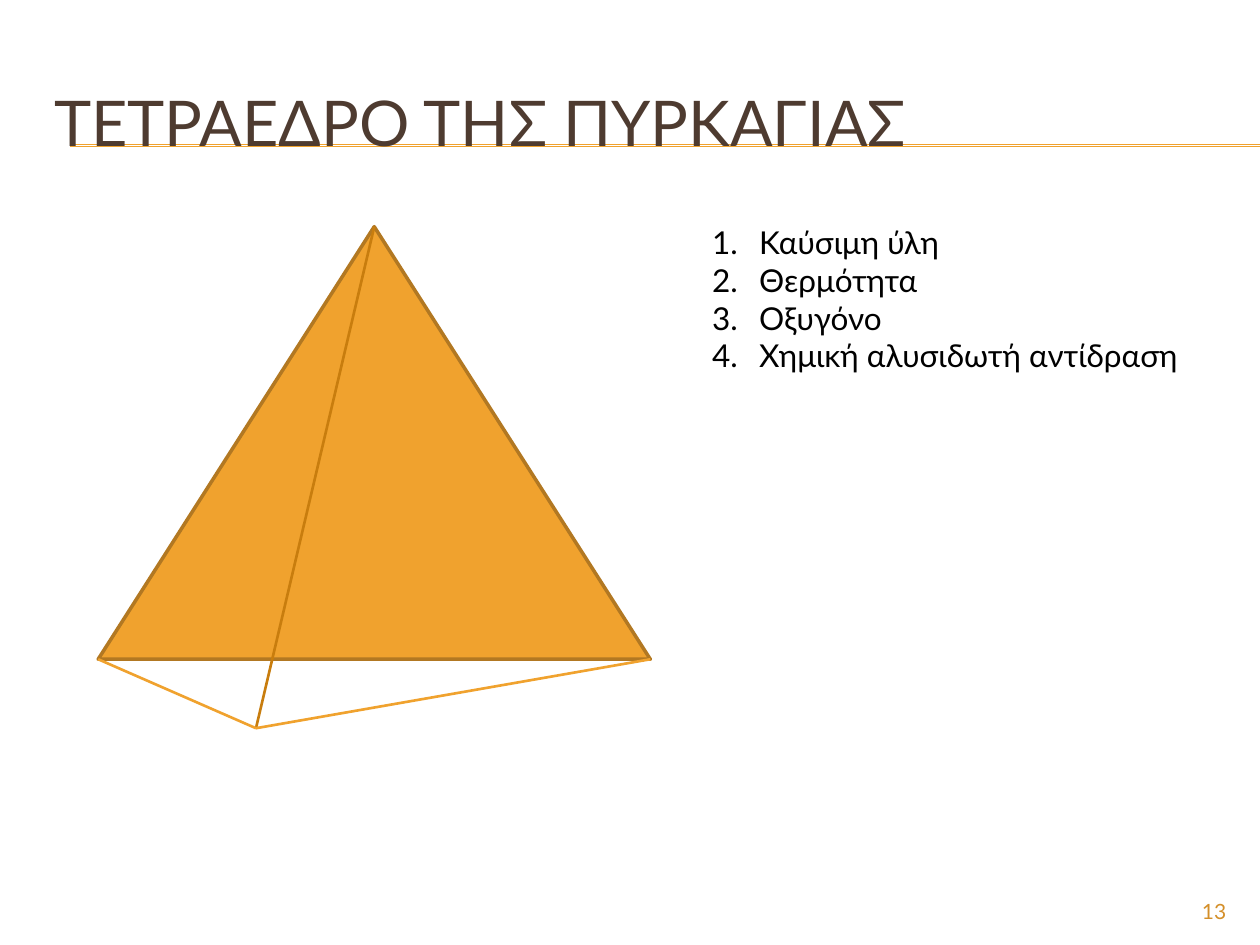
from pptx import Presentation
from pptx import util as u
from pptx.dml.color import RGBColor
from pptx.enum import shapes, text
from pptx.oxml.ns import qn
from lxml import etree

TITLE = "ΤΕΤΡΑΕΔΡΟ ΤΗΣ ΠΥΡΚΑΓΙΑΣ"
ELEMENTS = ["Καύσιμη ύλη", "Θερμότητα", "Οξυγόνο", "Χημική αλυσιδωτή αντίδραση"]
PAGE_NUMBER = "13"

FONT = "Lato"
ORANGE = RGBColor(0xF0, 0xA2, 0x2E)
OUTLINE = RGBColor(0xB2, 0x78, 0x22)
EDGE = RGBColor(0xC8, 0x7D, 0x0E)
GOLD = RGBColor(0xD4, 0x8F, 0x29)
BROWN = RGBColor(0x4E, 0x3B, 0x30)
BLACK = RGBColor(0, 0, 0)

RULE_LEFT, RULE_RIGHT = 1.42, 25.4
RULE_HEIGHTS = [2.92, 2.95]
LEFT, TOP, WIDTH, HEIGHT = 1.98, 4.57, 11.13, 8.72
APEX = (LEFT + WIDTH / 2, TOP)
LEFT_CORNER = (LEFT, TOP + HEIGHT)
RIGHT_CORNER = (LEFT + WIDTH, TOP + HEIGHT)
FRONT_CORNER = (5.16, 14.68)
EDGES = [
    (APEX, FRONT_CORNER, EDGE),
    (LEFT_CORNER, FRONT_CORNER, ORANGE),
    (FRONT_CORNER, RIGHT_CORNER, ORANGE),
]


def add_line(page, start, end, color, width):
    line = page.shapes.add_connector(
        shapes.MSO_CONNECTOR.STRAIGHT, *(u.Cm(value) for value in start + end))
    line.line.color.rgb = color
    line.line.width = u.Pt(width)
    etree.SubElement(line._element.spPr, qn("a:effectLst"))
    return line


def place(box, left, top, width, height):
    box.left, box.top, box.width, box.height = map(u.Cm, (left, top, width, height))


def format_text(box, size, color, align=text.PP_ALIGN.LEFT):
    for para in box.text_frame.paragraphs:
        para.alignment = align
        for span in para.runs:
            span.font.name = FONT
            span.font.size = u.Pt(size)
            span.font.color.rgb = color


def number_paragraph(para):
    para.space_before = u.Pt(0)
    properties = para._p.get_or_add_pPr()
    properties.set("marL", str(u.Cm(0.95)))
    properties.set("indent", str(u.Cm(-0.95)))
    etree.SubElement(properties, qn("a:buFont"), typeface=FONT)
    etree.SubElement(properties, qn("a:buAutoNum"), type="arabicPeriod")


def main():
    deck = Presentation()
    deck.slide_width, deck.slide_height = u.Cm(25.4), u.Cm(19.05)
    page = deck.slides.add_slide(deck.slide_layouts[1])
    title, body = page.placeholders

    for index, height in enumerate(RULE_HEIGHTS):
        rule = add_line(page, (RULE_LEFT, height), (RULE_RIGHT, height), ORANGE, 0.75)
        page.shapes._spTree.insert(2 + index, rule._element)

    place(title, 0.84, 1.27, 24.13, 2.34)
    title.text_frame.text = TITLE
    title.text_frame.auto_size = text.MSO_AUTO_SIZE.NONE
    title.text_frame.vertical_anchor = text.MSO_ANCHOR.MIDDLE
    format_text(title, 36, BROWN)

    face = page.shapes.add_shape(
        shapes.MSO_SHAPE.ISOSCELES_TRIANGLE, *map(u.Cm, (LEFT, TOP, WIDTH, HEIGHT)))
    face.shadow.inherit = False
    face.fill.solid()
    face.fill.fore_color.rgb = ORANGE
    face.line.color.rgb = OUTLINE
    face.line.width = u.Pt(2)

    for start, end, color in EDGES:
        add_line(page, start, end, color, 1.5)

    place(body, 14.1, 4.37, 9.93, 3.33)
    body.text_frame.text = "\n".join(ELEMENTS)
    body.text_frame.auto_size = text.MSO_AUTO_SIZE.SHAPE_TO_FIT_TEXT
    format_text(body, 18, BLACK)
    for para in body.text_frame.paragraphs:
        number_paragraph(para)

    number = page.shapes.add_textbox(*map(u.Cm, (22.86, 17.98, 2.11, 0.69)))
    number.text_frame.word_wrap = True
    number.text_frame.text = PAGE_NUMBER
    format_text(number, 12, GOLD, text.PP_ALIGN.RIGHT)

    deck.save("out.pptx")


if __name__ == "__main__":
    main()
